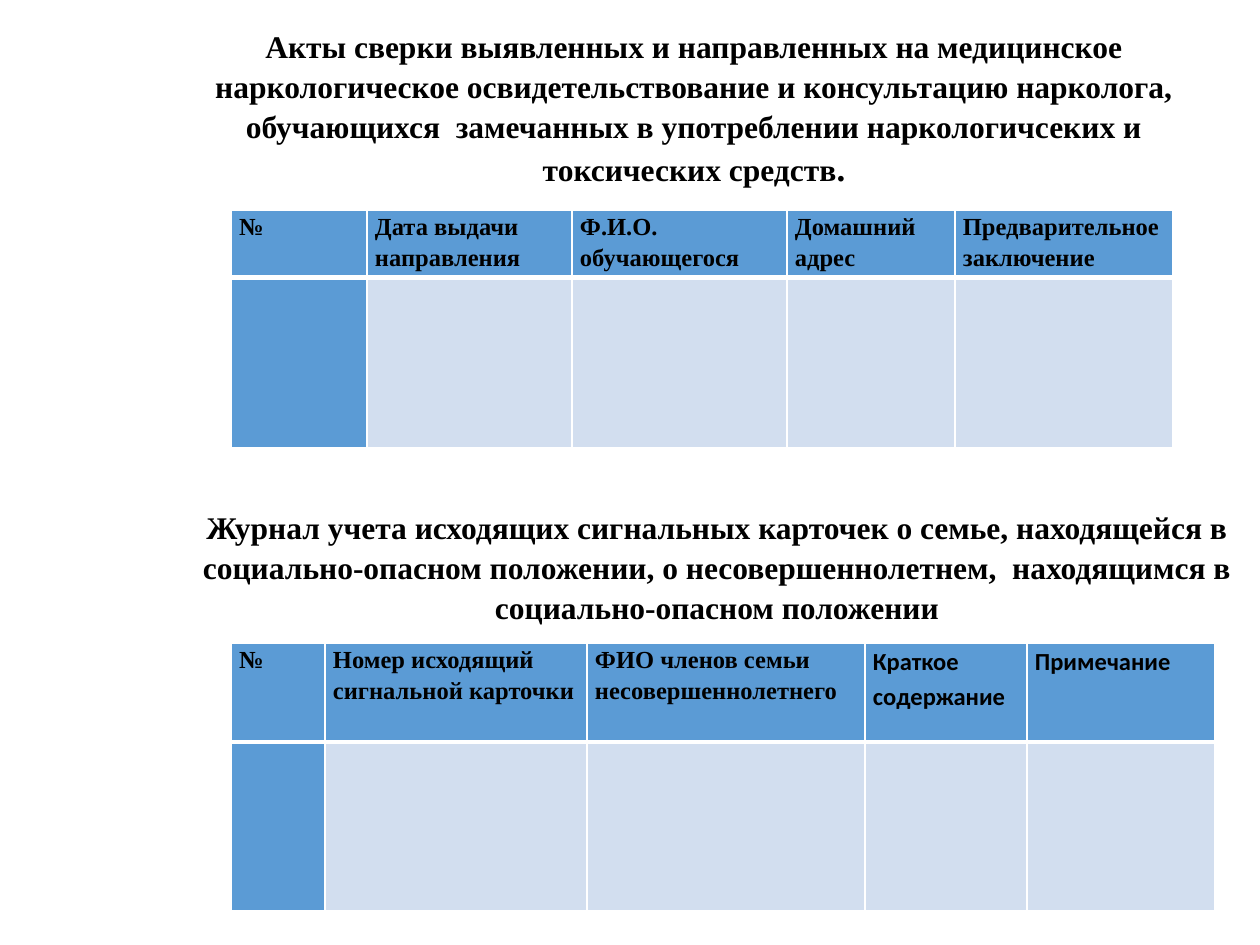
"""Build a slide with two headed register tables."""
from pptx import Presentation
from pptx.dml.color import RGBColor
from pptx.enum.text import MSO_ANCHOR, PP_ALIGN
from pptx.oxml import parse_xml
from pptx.oxml.ns import nsdecls
from pptx.util import Pt

PX = 914400 // 126
BLACK = RGBColor(0x00, 0x00, 0x00)
BLUE = RGBColor(0x5B, 0x9B, 0xD5)
PALE = RGBColor(0xD2, 0xDE, 0xEF)
SERIF = "Times New Roman"
SANS = "Calibri"


def add_span(para, text, size, font):
    span = para.add_run()
    span.text = text
    span.font.size = Pt(size)
    span.font.name = font
    span.font.bold = True
    span.font.color.rgb = BLACK


def set_borders(cell, bottom, top):
    properties = cell._tc.get_or_add_tcPr()
    widths = {"lnL": 1, "lnR": 1, "lnT": top, "lnB": bottom}
    for place, (side, width) in enumerate(widths.items()):
        properties.insert(place, parse_xml(
            f'<a:{side} {nsdecls("a")} w="{Pt(width)}"><a:solidFill>'
            f'<a:srgbClr val="FFFFFF"/></a:solidFill></a:{side}>'))


deck = Presentation()
deck.slide_width = 1260 * PX
deck.slide_height = 945 * PX
page = deck.slides.add_slide(deck.slide_layouts[6])

titles = [
    (174, 22, 1040, 170, [
        ("Акты сверки выявленных и направленных на медицинское наркологическое "
         "освидетельствование и консультацию нарколога, обучающихся  замечанных в "
         "употреблении наркологичсеких и токсических средств", 18),
        (".", 20)]),
    (174, 502, 1086, 128, [
        ("Журнал учета исходящих сигнальных карточек о семье, находящейся в "
         "социально-опасном положении, о несовершеннолетнем,  находящимся в "
         "социально-опасном положении", 18)]),
]
for left, top, width, height, spans in titles:
    box = page.shapes.add_textbox(left * PX, top * PX, width * PX, height * PX)
    frame = box.text_frame
    frame.word_wrap = True
    frame.vertical_anchor = MSO_ANCHOR.MIDDLE
    para = frame.paragraphs[0]
    para.alignment = PP_ALIGN.CENTER
    para.line_spacing = 1.05
    for text, size in spans:
        add_span(para, text, size, SERIF)

registers = [
    (210, (136, 205, 215, 168, 218), (62, 170), [
        ("№", SERIF), ("Дата выдачи направления", SERIF),
        ("Ф.И.О. обучающегося", SERIF), ("Домашний адрес", SERIF),
        ("Предварительное заключение", SERIF)]),
    (643, (94, 262, 278, 162, 188), (99, 169), [
        ("№", SERIF), ("Номер исходящий сигнальной карточки", SERIF),
        ("ФИО членов семьи несовершеннолетнего", SERIF),
        ("Краткое содержание", SANS), ("Примечание", SANS)]),
]
for top, widths, heights, headings in registers:
    table = page.shapes.add_table(
        2, len(widths), 231 * PX, top * PX, sum(widths) * PX, sum(heights) * PX).table
    table.first_row = False
    table.horz_banding = False
    for row, height in zip(table.rows, heights):
        row.height = height * PX
    for index, (width, (heading, font)) in enumerate(zip(widths, headings)):
        table.columns[index].width = width * PX
        header, body = table.cell(0, index), table.cell(1, index)
        for cell, color in ((header, BLUE), (body, PALE if index else BLUE)):
            cell.fill.solid()
            cell.fill.fore_color.rgb = color
        set_borders(header, bottom=3, top=1)
        set_borders(body, bottom=1, top=3)
        header.margin_left = header.margin_right = 8 * PX
        header.margin_top = header.margin_bottom = 0
        para = header.text_frame.paragraphs[0]
        para.line_spacing = 1.15
        add_span(para, heading, 14, font)

deck.save("out.pptx")
